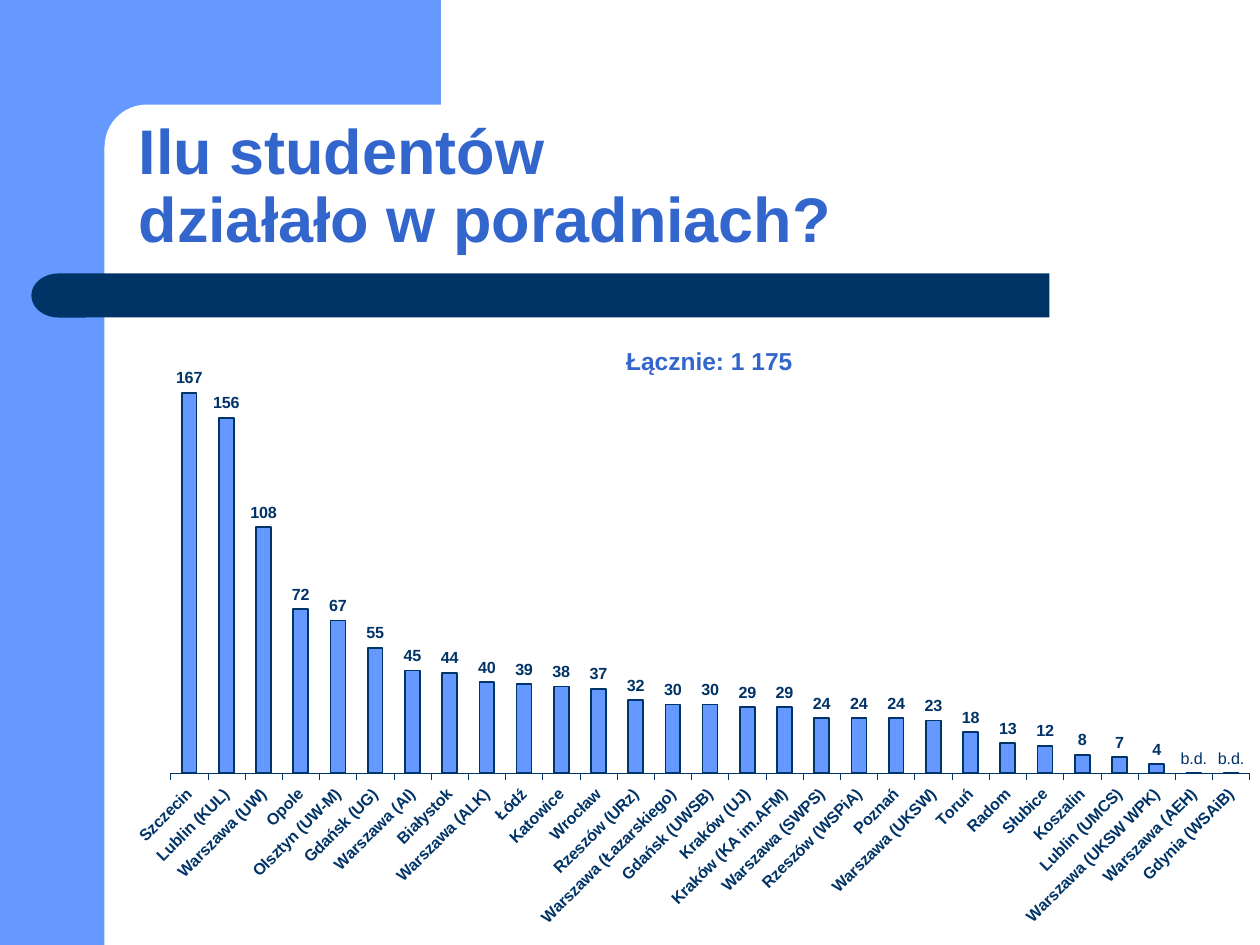
from lxml import etree
from pptx import Presentation
from pptx.chart.data import CategoryChartData as Data
from pptx.dml.color import RGBColor
from pptx.enum.chart import XL_CHART_TYPE as Kind, XL_LABEL_POSITION as Spot
from pptx.enum.chart import XL_TICK_LABEL_POSITION as Side, XL_TICK_MARK as Tick
from pptx.enum.shapes import MSO_SHAPE as Form
from pptx.enum.text import MSO_ANCHOR as Anchor, MSO_AUTO_SIZE as Fit, PP_ALIGN as Align
from pptx.oxml.ns import qn
from pptx.util import Inches, Pt

SKY, NAVY, BLUE, WHITE = "6699FF", "003366", "3366CC", "FFFFFF"

COUNTS = {
    "Szczecin": 167, "Lublin (KUL)": 156, "Warszawa (UW)": 108, "Opole": 72,
    "Olsztyn (UW-M)": 67, "Gdańsk (UG)": 55, "Warszawa (AI)": 45,
    "Białystok": 44, "Warszawa (ALK)": 40, "Łódź": 39, "Katowice": 38,
    "Wrocław": 37, "Rzeszów (URz)": 32, "Warszawa (Łazarskiego)": 30,
    "Gdańsk (UWSB)": 30, "Kraków (UJ)": 29, "Kraków (KA im.AFM)": 29,
    "Warszawa (SWPS)": 24, "Rzeszów (WSPiA)": 24, "Poznań": 24,
    "Warszawa (UKSW)": 23, "Toruń": 18, "Radom": 13, "Słubice": 12,
    "Koszalin": 8, "Lublin (UMCS)": 7, "Warszawa (UKSW WPK)": 4,
    "Warszawa (AEH)": 0, "Gdynia (WSAiB)": 0,
}


def tint(code):
    return RGBColor.from_string(code)


def apply(item, form):
    for name, value in form.items():
        setattr(item, name, value)


def style(font, size, code, bold=True):
    apply(font, {"name": "Arial", "size": Pt(size), "bold": bold})
    font.color.rgb = tint(code)


def block(slide, form, box, code, round=None):
    shape = slide.shapes.add_shape(form, *map(Inches, box))
    shape.shadow.inherit = False
    shape.fill.solid()
    shape.fill.fore_color.rgb = tint(code)
    shape.line.fill.background()
    if round is not None:
        shape.adjustments[0] = round
    return shape


def frame(slide, box):
    """Blue side and top bands with a rounded white inner corner."""
    x, y, w, h = box
    block(slide, Form.RECTANGLE, (x, y, 0.83, h), SKY)
    block(slide, Form.RECTANGLE, (x + 0.75, y, w - 0.75, 1.17), SKY)
    block(slide, Form.ROUNDED_RECTANGLE, (x + 0.83, y + 0.83, 5.58, 0.67), WHITE, 0.5)


def rule(slide, box):
    """Navy bar with a round left end."""
    x, y, w, h = box
    block(slide, Form.RECTANGLE, (x + 0.42, y, w - 0.42, h), NAVY)
    cap = block(slide, Form.FLOWCHART_DELAY, (x, y, 0.43, h), NAVY)
    cap.element.spPr.find(qn("a:xfrm")).set("flipH", "1")


def head(slide, box):
    title = slide.shapes.title
    slide.shapes._spTree.append(title.element)  # bring to front
    apply(title, dict(zip(("left", "top", "width", "height"), map(Inches, box))))
    text = title.text_frame
    text.text = "Ilu studentów \vdziałało w poradniach?"
    apply(text, {"word_wrap": True, "auto_size": Fit.NONE,
                 "vertical_anchor": Anchor.BOTTOM})
    para = text.paragraphs[0]
    apply(para, {"line_spacing": 0.9, "alignment": Align.LEFT})
    for run in para.runs:
        style(run.font, 36, BLUE)


def place(plot, spots):
    """Fix the inner plot area as fractions of the chart."""
    old = plot.find(qn("c:layout"))
    if old is not None:
        plot.remove(old)
    layout = etree.Element(qn("c:layout"))
    plot.insert(0, layout)
    manual = etree.SubElement(layout, qn("c:manualLayout"))
    parts = {"layoutTarget": "inner", "xMode": "edge", "yMode": "edge"}
    for name, value in {**parts, **spots}.items():
        etree.SubElement(manual, qn("c:" + name)).set("val", str(value))


def bars(slide, box):
    data = Data()
    data.categories = list(COUNTS)
    data.add_series("Series 1", list(COUNTS.values()))
    chart = slide.shapes.add_chart(
        Kind.COLUMN_CLUSTERED, *map(Inches, box), data).chart
    apply(chart, {"has_legend": False, "has_title": False})
    style(chart.font, 9.2, NAVY)
    place(chart._chartSpace.chart.plotArea,
          {"x": 0.062, "y": 0.153, "w": 0.926, "h": 0.598})

    # Axes
    apply(chart.value_axis, {"visible": False, "has_major_gridlines": False,
                             "minimum_scale": 0, "maximum_scale": 180})
    axis = chart.category_axis
    apply(axis, {"major_tick_mark": Tick.OUTSIDE, "minor_tick_mark": Tick.NONE,
                 "tick_label_position": Side.LOW, "has_major_gridlines": False})
    axis.format.line.color.rgb = tint(NAVY)
    axis.format.line.width = Pt(0.29)
    style(axis.tick_labels.font, 9.2, NAVY)
    body = axis._element.find(qn("c:txPr")).find(qn("a:bodyPr"))
    apply_xml = {"rot": "-2700000", "vert": "horz"}
    for name, value in apply_xml.items():
        body.set(name, value)

    # Columns
    plot = chart.plots[0]
    apply(plot, {"gap_width": 150, "vary_by_categories": False})
    row = plot.series[0]
    row.format.fill.solid()
    row.format.fill.fore_color.rgb = tint(SKY)
    row.format.line.color.rgb = tint(NAVY)
    row.format.line.width = Pt(1)

    # Labels, with "b.d." where there is no data
    labels = row.data_labels
    apply(labels, {"show_value": True, "position": Spot.OUTSIDE_END})
    style(labels.font, 9.2, NAVY)
    for i, count in enumerate(COUNTS.values()):
        if not count:
            label = row.points[i].data_label
            label.text_frame.text = "b.d."
            style(label.text_frame.paragraphs[0].runs[0].font, 9.2, NAVY, False)
            label.position = Spot.OUTSIDE_END


def total(slide, box):
    text = slide.shapes.add_textbox(*map(Inches, box)).text_frame
    apply(text, {"word_wrap": True, "auto_size": Fit.SHAPE_TO_FIT_TEXT})
    para = text.paragraphs[0]
    para.alignment = Align.CENTER
    run = para.add_run()
    run.text = "Łącznie: 1 175"
    style(run.font, 14, BLUE)


def main():
    deck = Presentation()
    apply(deck, {"slide_width": Inches(10), "slide_height": Inches(7.5)})
    slide = deck.slides.add_slide(deck.slide_layouts[5])
    frame(slide, (0, 0, 3.5, 7.5))
    rule(slide, (0.25, 2.17, 8.08, 0.35))
    head(slide, (1, 0.83, 8.75, 1.25))
    bars(slide, (0.78, 2.05, 9.25, 5.44))
    total(slide, (3.74, 2.7, 3.78, 0.33))
    deck.save("out.pptx")


if __name__ == "__main__":
    main()
